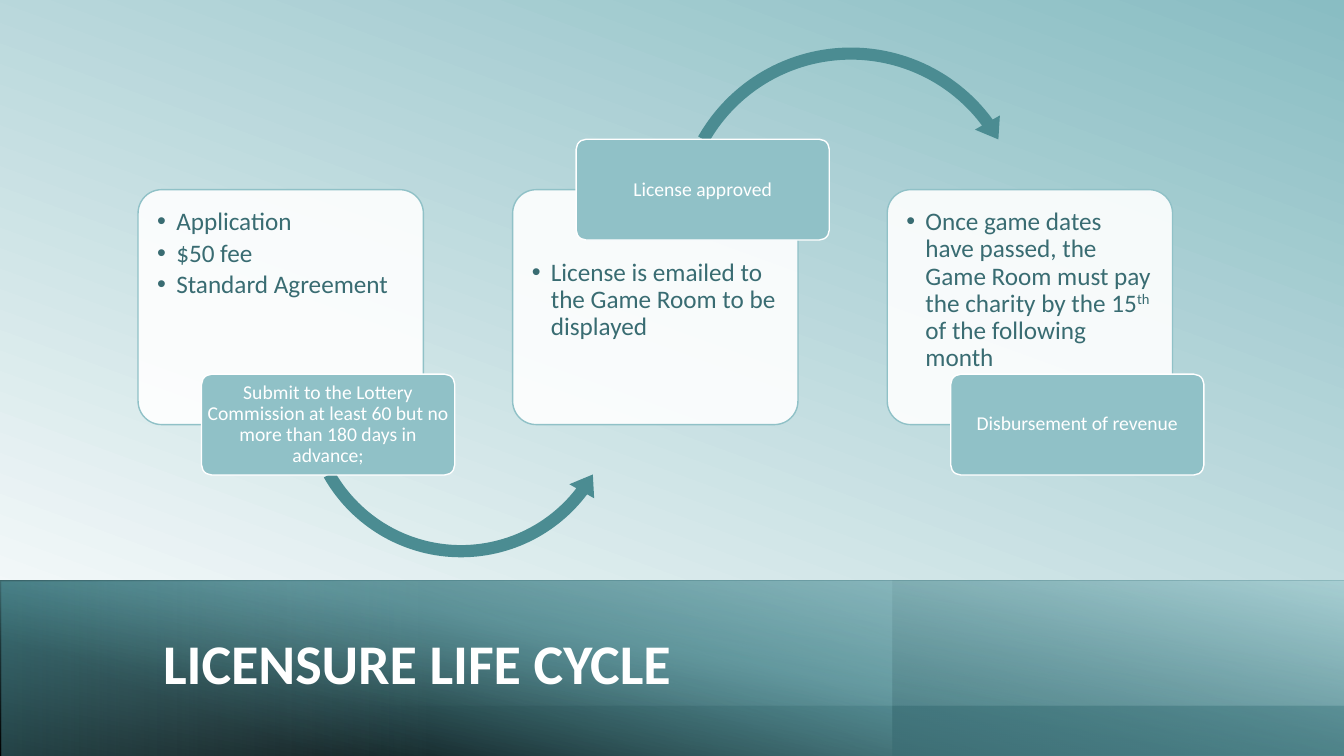
from lxml import etree
from pptx import Presentation
from pptx.dml.color import RGBColor
from pptx.enum.shapes import MSO_SHAPE
from pptx.enum.text import MSO_ANCHOR, PP_ALIGN
from pptx.oxml.ns import qn
from pptx.util import Cm, Pt

RECTANGLE, ROUNDED = MSO_SHAPE.RECTANGLE, MSO_SHAPE.ROUNDED_RECTANGLE
LEFT_ARC, RIGHT_ARC = MSO_SHAPE.LEFT_CIRCULAR_ARROW, MSO_SHAPE.CIRCULAR_ARROW
TOP, MIDDLE = MSO_ANCHOR.TOP, MSO_ANCHOR.MIDDLE
LEFT, CENTER = PP_ALIGN.LEFT, PP_ALIGN.CENTER

COLORS = {
    "white": "FFFFFF", "black": "000000", "sky": "89BDC3", "pale": "BCDADD",
    "light": "90C1C7", "medium": "57A1AA", "deep": "3A6C72",
    "text": "396C72", "arrow": "4B8C92",
}
TITLE_FONT = {"name": "Calibri", "size": Pt(40), "bold": True}
BODY_FONT = {"name": "Calibri", "size": Pt(18)}
BADGE_FONT = {"name": "Calibri", "size": Pt(14)}
BODY_PARAGRAPH = {"alignment": LEFT, "line_spacing": 0.9, "space_after": Pt(3)}
BADGE_PARAGRAPH = {"alignment": CENTER, "line_spacing": 0.9}
TITLE_PARAGRAPH = {"alignment": LEFT, "line_spacing": 0.9}

SLIDE_WIDTH, SLIDE_HEIGHT = 33.87, 19.05
BAND_TOP, BAND_HEIGHT = 14.63, 4.42
STEP_LEFT, STEP_TOP, STEP_PITCH = 3.48, 4.78, 9.44
STEP_WIDTH, STEP_HEIGHT = 7.19, 5.92
BADGE_WIDTH, BADGE_HEIGHT, BADGE_SHIFT = 6.38, 2.54, 1.6

STEPS = [
    {"bullets": [["Application"], ["$50 fee"], ["Standard Agreement"]],
     "badge": "Submit to the Lottery Commission at least 60 but no more than 180 days in advance;",
     "arrow": {"kind": LEFT_ARC, "box": (3.96, 1.11, 8.36),
               "thickness": 3.7, "angles": (7.62, 37.22, 150.41), "head": 4.3}},
    {"bullets": [["License is emailed to the Game Room to be displayed"]],
     "badge": "License approved", "badge_on_top": True,
     "arrow": {"kind": RIGHT_ARC, "box": (3.89, -3.79, 9.27),
               "thickness": 3.3, "angles": (6.81, 323.6, 209.59), "head": 3.9}},
    {"bullets": [["Once game dates have passed, the Game Room must pay the charity by the 15",
                  "th", " of the following month"]],
     "badge": "Disbursement of revenue"},
]


def color(name):
    """Return the named colour."""
    return RGBColor.from_string(COLORS[name])


def apply_format(target, values):
    """Set each attribute of the target from a dict."""
    for name, value in values.items():
        setattr(target, name, value)


def set_gradient(fill, element, stops, angle):
    """Fill with (position, colour, opacity) stops at a clockwise angle."""
    fill.gradient()
    fill.gradient_angle = -angle % 360
    stop_list = element.find(".//" + qn("a:gsLst"))
    del stop_list[:]
    for position, name, opacity in stops:
        stop = etree.SubElement(stop_list, qn("a:gs"), pos=str(position * 1000))
        tint = etree.SubElement(stop, qn("a:srgbClr"), val=COLORS[name])
        etree.SubElement(tint, qn("a:alpha"), val=str(opacity * 1000))


def add_shape(slide, kind, box, fill=None, line=None):
    """Add a shadowless shape to a box given in centimetres."""
    shape = slide.shapes.add_shape(kind, *map(Cm, box))
    shape.shadow.inherit = False
    if fill:
        shape.fill.solid()
        shape.fill.fore_color.rgb = color(fill)
    if line:
        shape.line.color.rgb = color(line)
        shape.line.width = Pt(1)
    else:
        shape.line.fill.background()
    return shape


def set_frame(shape, anchor, side, top, bottom):
    """Prepare a wrapping text frame with margins in centimetres."""
    apply_format(shape.text_frame, {
        "word_wrap": True, "vertical_anchor": anchor,
        "margin_left": Cm(side), "margin_right": Cm(side),
        "margin_top": Cm(top), "margin_bottom": Cm(bottom)})
    return shape.text_frame


def write(paragraph, texts, layout, font, font_color):
    """Write runs into a paragraph, raising every second one."""
    apply_format(paragraph, layout)
    for index, text in enumerate(texts):
        run = paragraph.add_run()
        run.text = text
        apply_format(run.font, font)
        run.font.color.rgb = color(font_color)
        if index % 2:
            run._r.get_or_add_rPr().set("baseline", "30000")


def add_bullet(paragraph):
    """Give a paragraph a hanging round bullet."""
    properties = paragraph._p.get_or_add_pPr()
    properties.set("marL", str(Cm(0.48)))
    properties.set("indent", str(-Cm(0.48)))
    etree.SubElement(properties, qn("a:buFont"), typeface="Arial")
    etree.SubElement(properties, qn("a:buChar"), char="•")


def add_title_band(slide, left, top, width, height):
    """Layer the gradient band and set the title on it."""
    layers = [
        ((0, 0, width, height), 260, [(0, "black", 100), (54, "deep", 100)], "flipH"),
        ((-0.05, 0, width + 0.05, height), 250,
         [(18, "medium", 0), (100, "light", 100)], "flipH"),
        ((22.5, 0, 11.37, height), 260, [(23, "deep", 61), (100, "deep", 0)], "flipH"),
        ((-0.03, 0, width + 0.03, 3.15), 280, [(18, "light", 0), (100, "pale", 56)], None),
        ((0.05, 0.03, 21.49, height), 0, [(50, "light", 0), (100, "medium", 41)], "turned"),
    ]
    for (x, y, w, h), angle, stops, orientation in layers:
        shape = add_shape(slide, RECTANGLE, (left + x, top + y, w, h))
        set_gradient(shape.fill, shape.element, stops, angle)
        if orientation == "flipH":
            shape.element.spPr.find(qn("a:xfrm")).set("flipH", "1")
        elif orientation == "turned":
            shape.rotation = 180
    title = slide.shapes.add_textbox(Cm(left + 3.86), Cm(top + 0.79), Cm(26.82), Cm(2.72))
    frame = set_frame(title, MIDDLE, 0.25, 0.13, 0.13)
    write(frame.paragraphs[0], ["LICENSURE LIFE CYCLE"], TITLE_PARAGRAPH, TITLE_FONT, "white")


def add_arrow(slide, left, top, arrow):
    """Add a curved arrow relative to its step's corner."""
    x, y, size = arrow["box"]
    shape = add_shape(slide, arrow["kind"], (left + x, top + y, size, size), "arrow")
    values = [arrow["thickness"] / 100, *(angle * 0.6 for angle in arrow["angles"]),
              arrow["head"] / 100]
    for index, value in enumerate(values):
        shape.adjustments[index] = value


def add_step(slide, left, top, width, height, step):
    """Add a card of bullets, its arrow and the badge across its edge."""
    badge_on_top = step.get("badge_on_top", False)
    card = add_shape(slide, ROUNDED, (left, top, width, height), "white", "light")
    card.adjustments[0] = 0.1
    tint = card.element.spPr.find(qn("a:solidFill"))[0]
    etree.SubElement(tint, qn("a:alpha"), val="90000")
    overlap = BADGE_HEIGHT / 2
    frame = set_frame(card, TOP, 0.31, 0.31 + overlap * badge_on_top, 0)
    for index, texts in enumerate(step["bullets"]):
        paragraph = frame.add_paragraph() if index else frame.paragraphs[0]
        write(paragraph, texts, BODY_PARAGRAPH, BODY_FONT, "text")
        add_bullet(paragraph)
    if "arrow" in step:
        add_arrow(slide, left, top, step["arrow"])
    edge = top if badge_on_top else top + height
    badge = add_shape(slide, ROUNDED, (left + BADGE_SHIFT, edge - overlap,
                                       BADGE_WIDTH, BADGE_HEIGHT), "light", "white")
    badge.adjustments[0] = 0.1
    frame = set_frame(badge, MIDDLE, 0.05, 0.05, 0.05)
    write(frame.paragraphs[0], [step["badge"]], BADGE_PARAGRAPH, BADGE_FONT, "white")


def main():
    """Build and save the slide."""
    presentation = Presentation()
    presentation.slide_width, presentation.slide_height = Cm(SLIDE_WIDTH), Cm(SLIDE_HEIGHT)
    slide = presentation.slides.add_slide(presentation.slide_layouts[6])
    set_gradient(slide.background.fill, slide.element,
                 [(0, "sky", 100), (97, "white", 100), (100, "sky", 100)], 110)
    add_title_band(slide, 0, BAND_TOP, SLIDE_WIDTH, BAND_HEIGHT)
    for index, step in enumerate(STEPS):
        add_step(slide, STEP_LEFT + index * STEP_PITCH, STEP_TOP,
                 STEP_WIDTH, STEP_HEIGHT, step)
    presentation.save("out.pptx")


if __name__ == "__main__":
    main()
